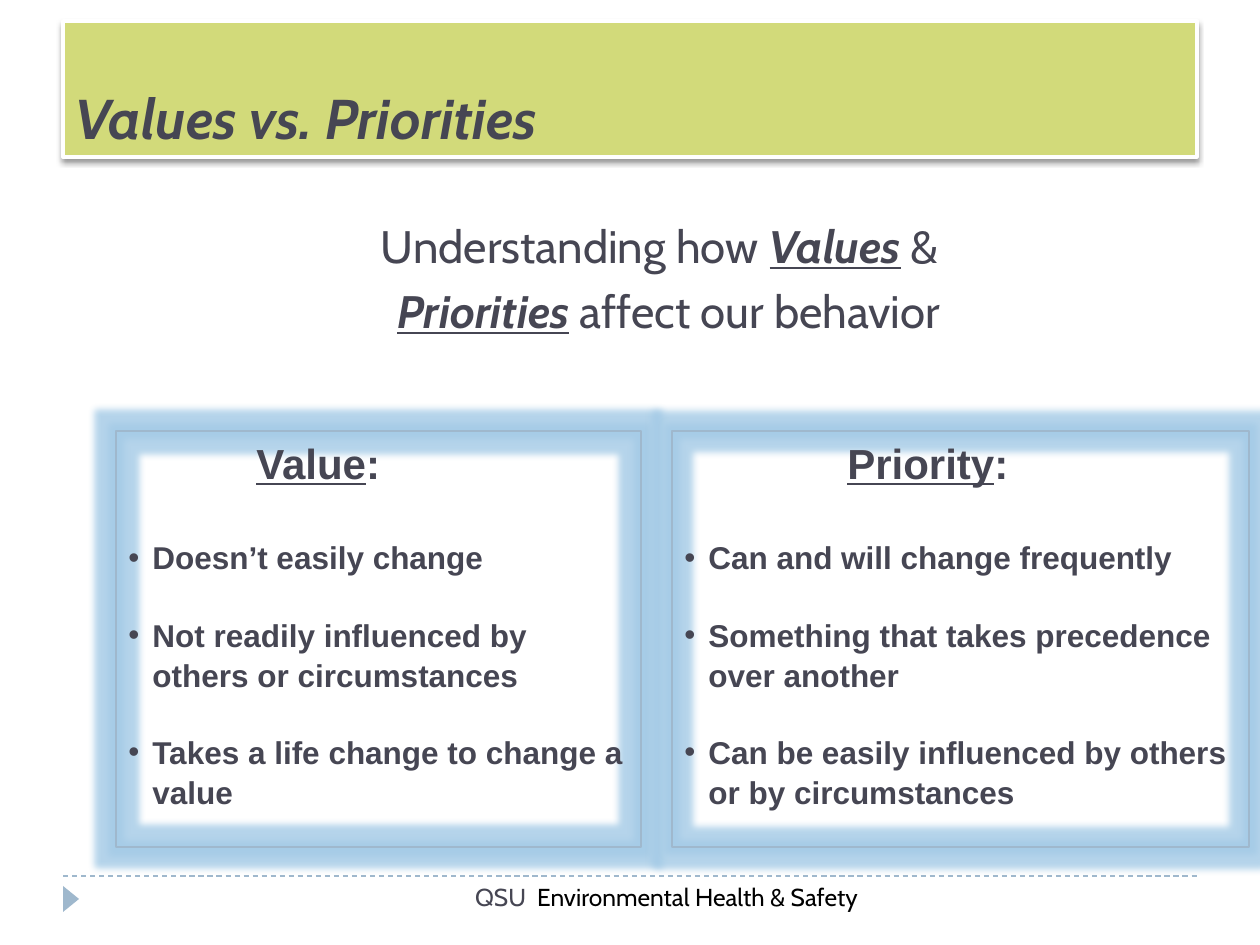
from lxml import etree
from pptx import Presentation
from pptx import util as u
from pptx.dml.color import RGBColor
from pptx.enum import dml, shapes, text
from pptx.oxml import parse_xml
from pptx.oxml.ns import nsdecls, qn

INK = {"text": "464653", "black": "000000", "band": "D2DA7A", "white": "FFFFFF",
       "blue": "9FB8CD", "glow": "A3CAE6"}
PANELS = [
    (116, 525, 128, "Value",
     ["Doesn’t easily change",
      "Not readily influenced by others or circumstances",
      "Takes a life change to change a value"]),
    (672, 577, 163, "Priority",
     ["Can and will change frequently",
      "Something that takes precedence over another",
      "Can be easily influenced by others or by circumstances"]),
]


def px(n):
    return u.Emu(n * 914400 // 126)


def rgb(name):
    return RGBColor.from_string(INK[name])


def add_run(para, words, size, font="Cabin", color="text", bold=False,
            slant=False, under=False):
    run = para.add_run()
    run.text = words
    f = run.font
    f.name, f.size, f.color.rgb = font, u.Pt(size), rgb(color)
    f.bold, f.italic, f.underline = bold, slant, under


def indent(para, left, first=0, bullet=False):
    """Set left and first-line indents in px, with or without a bullet."""
    ppr = para._p.get_or_add_pPr()
    ppr.set("marL", str(px(left)))
    ppr.set("indent", str(px(first)))
    if bullet:
        etree.SubElement(ppr, qn("a:buFont")).set("typeface", "Arial")
        etree.SubElement(ppr, qn("a:buChar")).set("char", "•")


def add_effect(shape, name, attrs, color, alpha):
    """Put one glow or outer shadow on a shape."""
    old = shape._element.spPr.find(qn("a:effectLst"))
    old.append(parse_xml(
        f'<a:{name} {nsdecls("a")} {attrs}><a:srgbClr val="{INK[color]}">'
        f'<a:alpha val="{alpha * 1000}"/></a:srgbClr></a:{name}>'))


def add_box(slide, kind, x, y, w, h, fill=None, line=None, width=0.75):
    box = slide.shapes.add_shape(kind, px(x), px(y), px(w), px(h))
    box.shadow.inherit = False
    if fill:
        box.fill.solid()
        box.fill.fore_color.rgb = rgb(fill)
    else:
        box.fill.background()
    if line:
        box.line.color.rgb = rgb(line)
        box.line.width = u.Pt(width)
    else:
        box.line.fill.background()
    return box


def add_text(slide, x, y, w, h):
    frame = slide.shapes.add_textbox(px(x), px(y), px(w), px(h)).text_frame
    frame.word_wrap = True
    return frame


def add_title(slide):
    box = add_box(slide, shapes.MSO_SHAPE.RECTANGLE, 63, 21, 1134, 136,
                  "band", "white", 2)
    add_effect(box, "outerShdw", 'blurRad="38100" dist="25400" dir="5400000"',
               "black", 40)
    box.text_frame.vertical_anchor = text.MSO_ANCHOR.BOTTOM
    para = box.text_frame.paragraphs[0]
    para.alignment = text.PP_ALIGN.LEFT
    add_run(para, "Values vs. Priorities", 32, bold=True, slant=True)


def add_intro(slide):
    frame = add_text(slide, 63, 212, 1134, 150)
    key = dict(bold=True, slant=True, under=True)
    lines = [[("Understanding how ", {}), ("Values", key), (" & ", {})],
             [("\tPriorities", key), (" affect our behavior", {})]]
    for i, parts in enumerate(lines):
        para = frame.add_paragraph() if i else frame.paragraphs[0]
        para.alignment = text.PP_ALIGN.CENTER
        para.space_before = u.Pt(6)
        indent(para, 78, -8)
        for words, style in parts:
            add_run(para, words, 26, **style)


def add_panel(slide, x, w, shift, head, points):
    box = add_box(slide, shapes.MSO_SHAPE.RECTANGLE, x, 431, w, 416, line="blue")
    add_effect(box, "glow", 'rad="101600"', "glow", 80)
    frame = box.text_frame
    frame.word_wrap = True
    frame.vertical_anchor = text.MSO_ANCHOR.TOP
    para = frame.paragraphs[0]
    para.alignment = text.PP_ALIGN.LEFT
    indent(para, shift)
    add_run(para, head, 24, "Arial", bold=True, under=True)
    add_run(para, ":", 24, "Arial", bold=True)
    for i, point in enumerate(points):
        para = frame.add_paragraph()
        para.alignment = text.PP_ALIGN.LEFT
        para.line_spacing = 1.05
        para.space_before = u.Pt(21.6 if i else 28)
        indent(para, 24, -24, bullet=True)
        add_run(para, point, 18, "Arial", bold=True)


def add_footer(slide):
    rule = slide.shapes.add_connector(shapes.MSO_CONNECTOR.STRAIGHT,
                                      px(63), px(876), px(1197), px(876))
    rule.line.color.rgb = rgb("blue")
    rule.line.width = u.Pt(0.75)
    rule.line.dash_style = dml.MSO_LINE.DASH
    etree.SubElement(rule._element.spPr, qn("a:effectLst"))
    mark = add_box(slide, shapes.MSO_SHAPE.ISOSCELES_TRIANGLE, 58, 891, 26, 16, "blue")
    mark.rotation = 90
    frame = add_text(slide, 399, 876, 483, 50)
    frame.margin_right = px(24)
    para = frame.paragraphs[0]
    para.alignment = text.PP_ALIGN.RIGHT
    add_run(para, "QSU  ", 14)
    add_run(para, "Environmental Health & Safety", 14, color="black")


def main():
    deck = Presentation()
    deck.slide_width, deck.slide_height = px(1260), px(945)
    slide = deck.slides.add_slide(deck.slide_layouts[6])
    add_footer(slide)
    add_title(slide)
    add_intro(slide)
    for panel in PANELS:
        add_panel(slide, *panel)
    deck.save("out.pptx")


if __name__ == "__main__":
    main()
